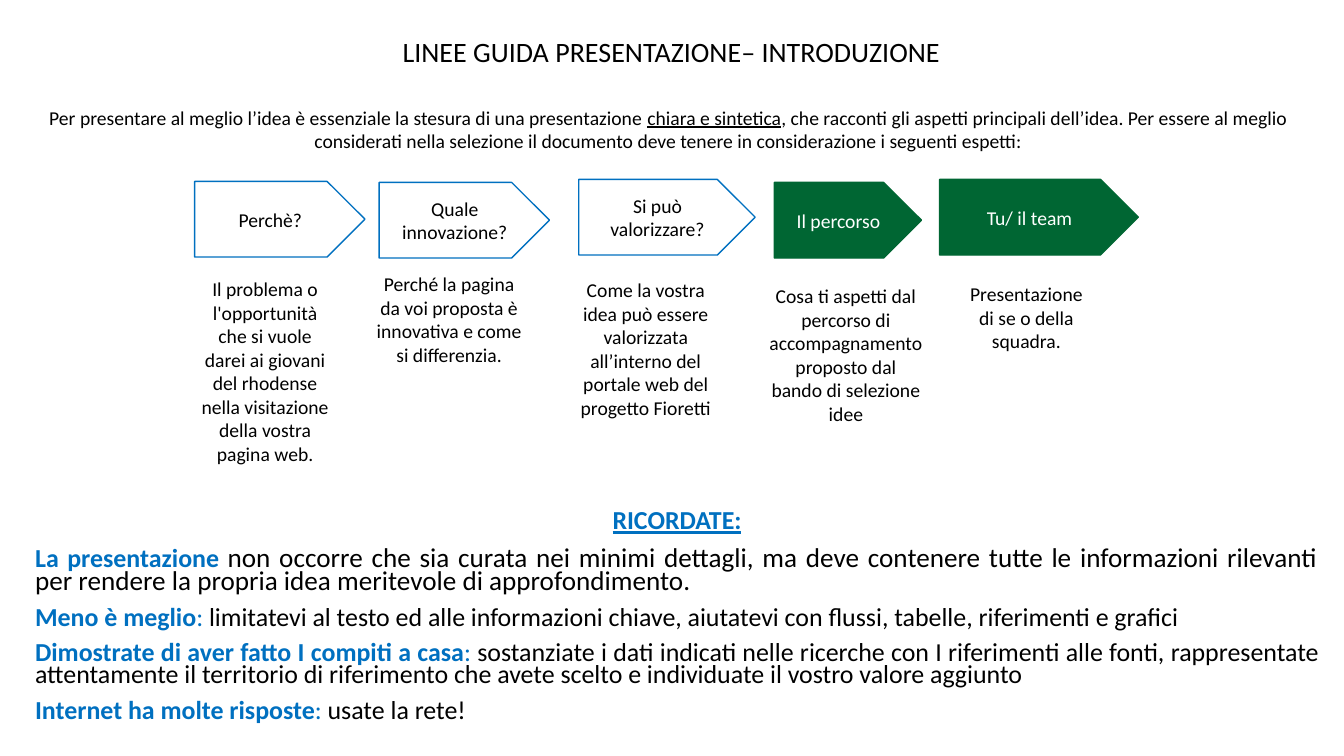
"""Build the slide with the guidelines for presenting an idea."""
from pptx import Presentation
from pptx import util as u
from pptx.dml.color import RGBColor
from pptx.enum import shapes, text

PX = 9144
BLACK = RGBColor(0, 0, 0)
WHITE = RGBColor(255, 255, 255)
BLUE = RGBColor(0x00, 0x70, 0xC0)
GREEN = RGBColor(0x00, 0x66, 0x33)


def place(shape, left, top, width, height):
    shape.left, shape.top = left * PX, top * PX
    shape.width, shape.height = width * PX, height * PX


def add_run(para, words, size=14, color=BLACK, bold=False, underline=False):
    span = para.add_run()
    span.text = words
    font = span.font
    font.name, font.size = "Calibri", u.Pt(size)
    font.color.rgb = color
    font.bold, font.underline = bold, underline


deck = Presentation()
deck.slide_width, deck.slide_height = 1333 * PX, 750 * PX
page = deck.slides.add_slide(deck.slide_layouts[5])

title = page.shapes.title
place(title, 31, 25, 1270, 48)
title.text_frame.vertical_anchor = text.MSO_ANCHOR.BOTTOM
title.text_frame.auto_size = text.MSO_AUTO_SIZE.NONE
para = title.text_frame.paragraphs[0]
para.alignment = text.PP_ALIGN.CENTER
para.line_spacing = 0.9
add_run(para, "LINEE GUIDA PRESENTAZIONE– INTRODUZIONE", 20)

arrows = [
    ("Perchè?", 193, 180, 169, WHITE, BLUE, BLACK),
    ("Quale innovazione?", 376, 181, 169, WHITE, BLUE, BLACK),
    ("Si può valorizzare?", 574, 178, 175, WHITE, BLUE, BLACK),
    ("Il percorso", 768, 181, 146, GREEN, GREEN, WHITE),
    ("Tu/ il team", 932, 178, 197, GREEN, GREEN, WHITE),
]
for words, left, top, width, fill, line, color in arrows:
    arrow = page.shapes.add_shape(
        shapes.MSO_SHAPE.PENTAGON, left * PX, top * PX, width * PX, 75 * PX)
    arrow.shadow.inherit = False
    arrow.fill.solid()
    arrow.fill.fore_color.rgb = fill
    arrow.line.color.rgb = line
    arrow.line.width = u.Pt(1)
    arrow.text_frame.word_wrap = True
    arrow.text_frame.vertical_anchor = text.MSO_ANCHOR.MIDDLE
    para = arrow.text_frame.paragraphs[0]
    para.alignment = text.PP_ALIGN.CENTER
    add_run(para, words, color=color)

notes = [
    (25, 100, 1276, 83, [
        ("Per presentare al meglio l’idea è essenziale la stesura di una presentazione ", False),
        ("chiara e sintetica", True),
        (", che racconti gli aspetti principali dell’idea. Per essere al meglio considerati "
         "nella selezione il documento deve tenere in considerazione i seguenti espetti:", False)]),
    (188, 270, 150, 155, [
        ("Il problema o l'opportunità che si vuole darei ai giovani del rhodense "
         "nella visitazione della vostra pagina web.", False)]),
    (362, 265, 167, 100, [
        ("Perché la pagina da voi proposta è innovativa e come si differenzia.", False)]),
    (557, 271, 167, 133, [
        ("Come la vostra idea può essere valorizzata all’interno del portale web "
         "del progetto Fioretti", False)]),
    (752, 277, 174, 133, [
        ("Cosa ti aspetti dal percorso di accompagnamento proposto dal bando "
         "di selezione idee", False)]),
    (947, 275, 142, 100, [("Presentazione di se o della squadra.", False)]),
]
for left, top, width, height, spans in notes:
    box = page.shapes.add_textbox(left * PX, top * PX, width * PX, height * PX)
    box.text_frame.word_wrap = True
    para = box.text_frame.paragraphs[0]
    para.alignment = text.PP_ALIGN.CENTER
    for words, underline in spans:
        add_run(para, words, underline=underline)

reminder = page.shapes.add_textbox(25 * PX, 495 * PX, 1293 * PX, 226 * PX)
frame = reminder.text_frame
frame.word_wrap = True
para = frame.paragraphs[0]
para.alignment = text.PP_ALIGN.CENTER
add_run(para, "RICORDATE:", 18.5, BLUE, bold=True, underline=True)

tips = [
    ("La presentazione", " ", 19.4,
     "non occorre che sia curata nei minimi dettagli, ma deve contenere tutte le informazioni "
     "rilevanti per rendere la propria idea meritevole di approfondimento."),
    ("Meno è meglio", ": ", 18.5,
     "limitatevi al testo ed alle informazioni chiave, aiutatevi con flussi, tabelle, "
     "riferimenti e grafici"),
    ("Dimostrate di aver fatto I compiti a casa", ": ", 18.5,
     "sostanziate i dati indicati nelle ricerche con I riferimenti alle fonti, rappresentate "
     "attentamente il territorio di riferimento che avete scelto e individuate il vostro "
     "valore aggiunto"),
    ("Internet ha molte risposte", ": ", 18.5, "usate la rete!"),
]
for lead, mark, size, words in tips:
    para = frame.add_paragraph()
    para.alignment = text.PP_ALIGN.JUSTIFY
    para.line_spacing = 0.7
    para.space_before = u.Pt(10)
    add_run(para, lead, 18.5, BLUE, bold=True)
    add_run(para, mark, 18.5, BLUE)
    add_run(para, words, size)

deck.save("out.pptx")
